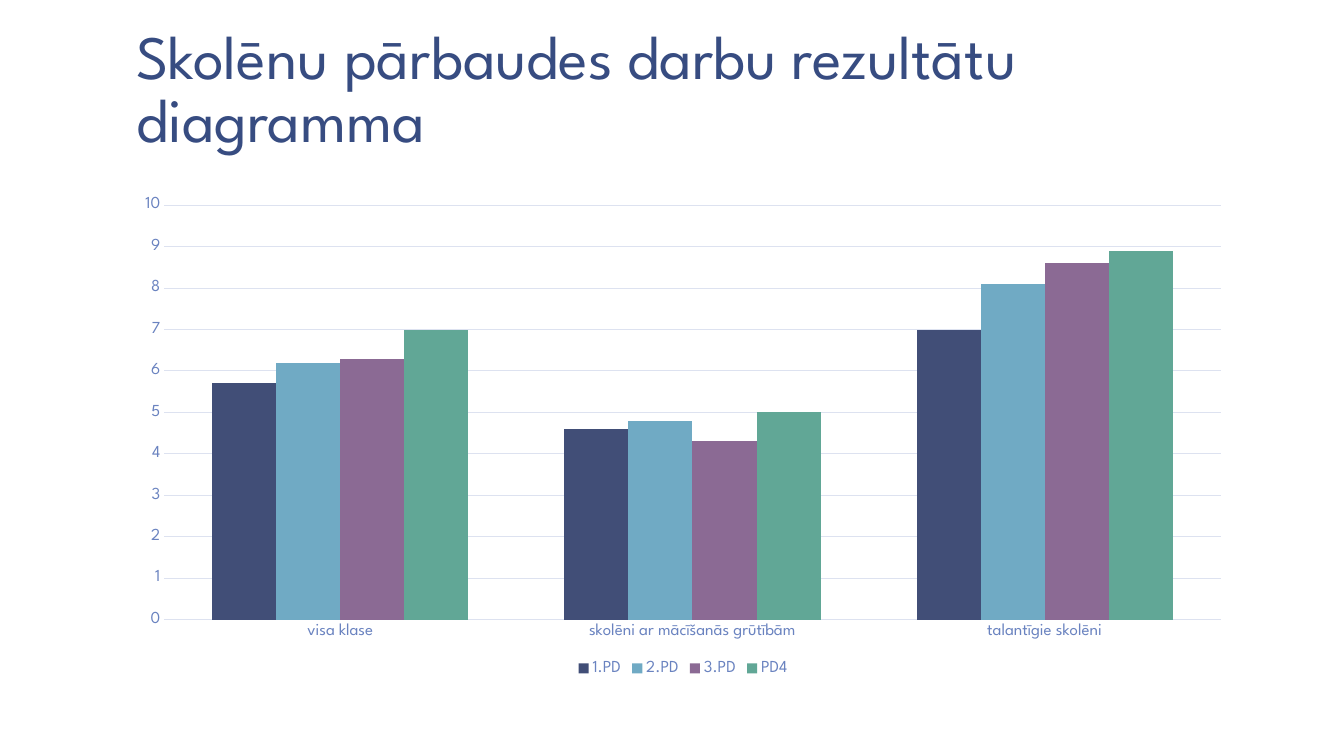
from dataclasses import dataclass

from pptx import Presentation
from pptx.chart.data import CategoryChartData
from pptx.dml.color import RGBColor
from pptx.enum.chart import XL_CHART_TYPE as ChartType
from pptx.enum.chart import XL_LEGEND_POSITION as LegendPosition
from pptx.enum.chart import XL_TICK_MARK as TickMark
from pptx.enum.text import MSO_ANCHOR, MSO_AUTO_SIZE
from pptx.text.text import Font
from pptx.util import Inches, Pt

FONT = "League Spartan"
WHITE = RGBColor(0xFF, 0xFF, 0xFF)
NAVY = RGBColor(0x37, 0x4C, 0x81)
LABEL = RGBColor(0x6A, 0x83, 0xC0)
GRID = RGBColor(0xDD, 0xE2, 0xF0)


@dataclass(frozen=True)
class TestSeries:
    name: str
    values: tuple[float, ...]
    color: RGBColor


GROUPS = ("visa klase", "skolēni ar mācīšanās grūtībām", "talantīgie skolēni")
TESTS = (
    TestSeries("1.PD", (5.7, 4.6, 7), RGBColor(0x41, 0x4E, 0x77)),
    TestSeries("2.PD", (6.2, 4.8, 8.1), RGBColor(0x70, 0xAA, 0xC4)),
    TestSeries("3.PD", (6.3, 4.3, 8.6), RGBColor(0x8B, 0x6A, 0x94)),
    TestSeries("PD4", (7, 5, 8.9), RGBColor(0x61, 0xA7, 0x96)),
)


def set_attrs(target: object, values: dict) -> None:
    for name, value in values.items():
        setattr(target, name, value)


def style_font(font: Font, size: float, color: RGBColor) -> None:
    set_attrs(font, {"name": FONT, "size": Pt(size), "bold": False})
    font.color.rgb = color


def add_title(s) -> None:
    title = s.shapes.title
    set_attrs(title, {"left": Inches(1.22), "top": Inches(0.08),
                      "width": Inches(11.11), "height": Inches(1.53)})
    tf = title.text_frame
    set_attrs(tf, {"word_wrap": True, "auto_size": MSO_AUTO_SIZE.NONE,
                   "vertical_anchor": MSO_ANCHOR.BOTTOM,
                   "margin_left": Inches(0.13), "margin_right": Inches(0.13),
                   "margin_top": Inches(0.07), "margin_bottom": Inches(0.07)})
    p = tf.paragraphs[0]
    set_attrs(p, {"line_spacing": 0.85, "space_before": Pt(0)})
    p.alignment = 1
    r = p.add_run()
    r.text = "Skolēnu pārbaudes darbu rezultātu diagramma"
    style_font(r.font, 44, NAVY)


def add_results_chart(s) -> None:
    data = CategoryChartData()
    data.categories = GROUPS
    for test in TESTS:
        data.add_series(test.name, test.values)
    chart = s.shapes.add_chart(ChartType.COLUMN_CLUSTERED, Inches(1.22), Inches(1.86),
                               Inches(11.11), Inches(4.89), data).chart
    style_font(chart.font, 10, NAVY)
    set_attrs(chart, {"has_title": False, "has_legend": True})
    set_attrs(chart.legend, {"position": LegendPosition.BOTTOM, "include_in_layout": False})
    style_font(chart.legend.font, 12, LABEL)

    plot = chart.plots[0]
    set_attrs(plot, {"gap_width": 150, "overlap": 0, "vary_by_categories": False})
    for series, test in zip(plot.series, TESTS):
        series.format.fill.solid()
        series.format.fill.fore_color.rgb = test.color

    for axis in (chart.category_axis, chart.value_axis):
        set_attrs(axis, {"major_tick_mark": TickMark.NONE, "minor_tick_mark": TickMark.NONE})
        style_font(axis.tick_labels.font, 12, LABEL)
    value_axis = chart.value_axis
    set_attrs(value_axis, {"minimum_scale": 0, "maximum_scale": 10, "major_unit": 1})
    value_axis.format.line.fill.background()
    for line in (chart.category_axis.format.line, value_axis.major_gridlines.format.line):
        line.width = Pt(0.75)
        line.color.rgb = GRID


def main() -> None:
    prs = Presentation()
    set_attrs(prs, {"slide_width": Inches(13.33), "slide_height": Inches(7.5)})
    s = prs.slides.add_slide(prs.slide_layouts[5])
    s.background.fill.solid()
    s.background.fill.fore_color.rgb = WHITE
    add_title(s)
    add_results_chart(s)
    prs.save("out.pptx")


if __name__ == "__main__":
    main()
